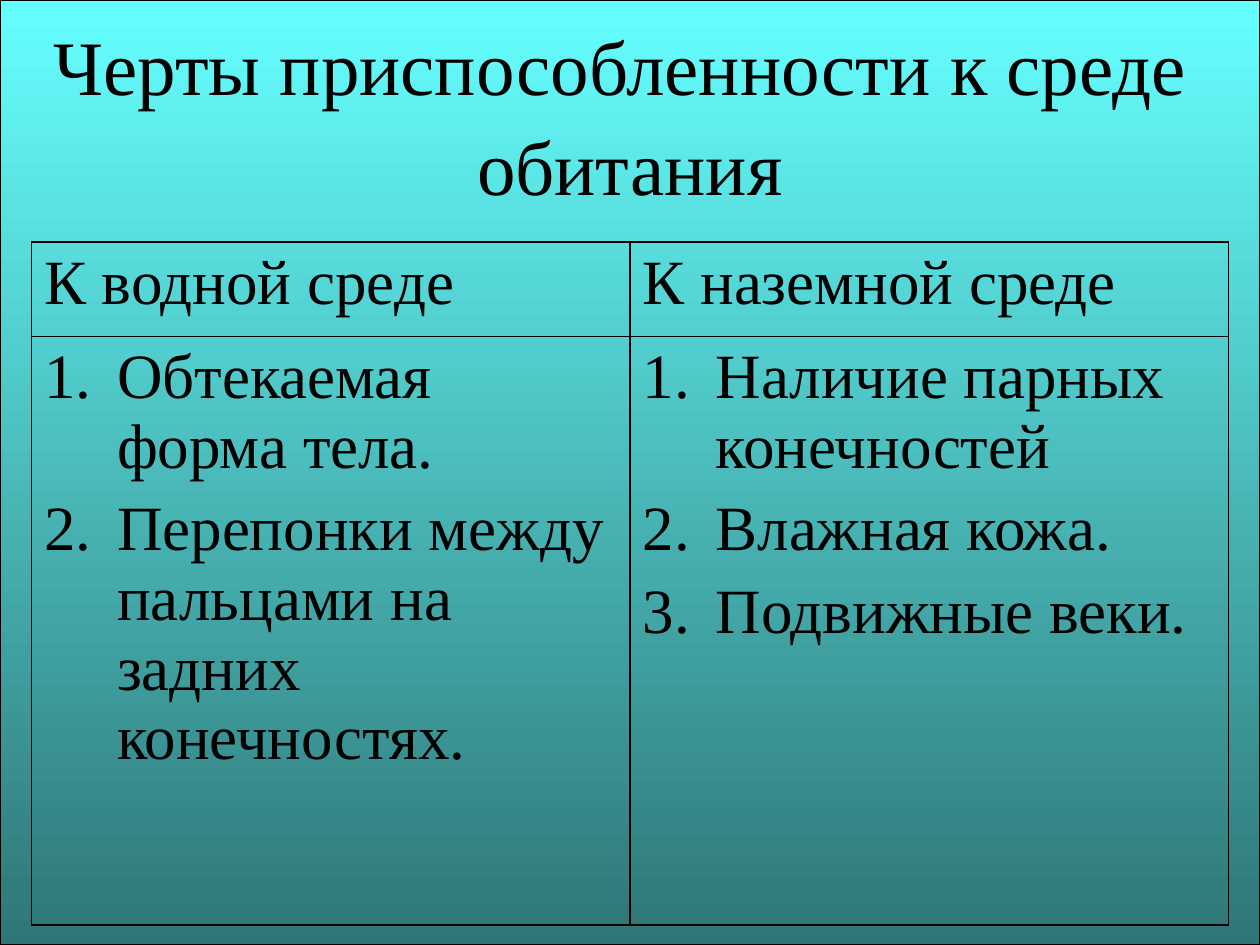
"""Build a slide comparing adaptations to water and to land."""
from dataclasses import dataclass

from lxml.etree import SubElement
from pptx import Presentation
from pptx.dml.color import RGBColor
from pptx.dml.fill import FillFormat
from pptx.enum.text import MSO_ANCHOR, MSO_AUTO_SIZE, PP_ALIGN
from pptx.oxml.ns import qn
from pptx.slide import Slide
from pptx.table import _Cell
from pptx.text.text import _Paragraph
from pptx.util import Inches, Pt

FONT = "Times New Roman"
BLACK = "000000"
GRADIENT = ("66FFFF", "2F7676")
WIDTH, HEIGHT = Inches(10), Inches(7.5)
TABLE_LEFT, TABLE_TOP = Inches(0.25), Inches(1.92)
ROW_HEIGHTS = (Inches(0.75), Inches(4.67))
NUMBER_INDENT = Inches(0.58)
TITLE = ("Черты приспособленности к среде ", "обитания")


@dataclass
class Habitat:
    heading: str
    traits: tuple[str, ...]


HABITATS = (
    Habitat("К водной среде", (
        "Обтекаемая форма тела.",
        "Перепонки между пальцами на задних конечностях.",
    )),
    Habitat("К наземной среде", (
        "Наличие парных конечностей",
        "Влажная кожа.",
        "Подвижные веки.",
    )),
)


def color(value: str) -> RGBColor:
    return RGBColor.from_string(value)


def fill_gradient(fill: FillFormat) -> None:
    fill.gradient()
    fill.gradient_angle = 270
    for stop, shade in zip(fill.gradient_stops, GRADIENT):
        stop.color.rgb = color(shade)


def style(paragraph: _Paragraph, size: int) -> None:
    paragraph.font.name = FONT
    paragraph.font.size = Pt(size)
    paragraph.font.color.rgb = color(BLACK)


def number(paragraph: _Paragraph) -> None:
    properties = paragraph._p.get_or_add_pPr()
    properties.set("marL", str(NUMBER_INDENT))
    properties.set("indent", str(-NUMBER_INDENT))
    bullet = properties.makeelement(qn("a:buAutoNum"), {"type": "arabicPeriod"})
    properties.insert_element_before(bullet, "a:tabLst", "a:defRPr", "a:extLst")


def outline(cell: _Cell) -> None:
    properties = cell._tc.get_or_add_tcPr()
    for position, side in enumerate(("lnL", "lnR", "lnT", "lnB")):
        border = SubElement(properties, qn(f"a:{side}"), w=str(Pt(1)))
        fill = SubElement(border, qn("a:solidFill"))
        SubElement(fill, qn("a:srgbClr"), val=BLACK)
        properties.insert(position, border)


def write_cell(cell: _Cell, lines: tuple[str, ...], numbered: bool) -> None:
    cell.fill.background()
    outline(cell)
    cell.text = "\n".join(lines)
    for paragraph in cell.text_frame.paragraphs:
        paragraph.space_before = Pt(7.2)
        style(paragraph, 36)
        if numbered:
            number(paragraph)


def add_title(slide: Slide) -> None:
    title = slide.shapes.title
    title.left, title.top, title.width, title.height = 0, 0, WIDTH, HEIGHT
    fill_gradient(title.fill)
    title.line.color.rgb = color(BLACK)
    title.line.width = Pt(0.75)
    frame = title.text_frame
    frame.text = "\n".join(TITLE)
    frame.auto_size = MSO_AUTO_SIZE.NONE
    frame.word_wrap = False
    frame.vertical_anchor = MSO_ANCHOR.TOP
    frame.margin_top = Inches(0.15)
    for paragraph in frame.paragraphs:
        paragraph.alignment = PP_ALIGN.CENTER
        style(paragraph, 44)
    frame.paragraphs[-1].space_before = Pt(4)


def add_habitats(slide: Slide) -> None:
    table = slide.shapes.add_table(
        len(ROW_HEIGHTS), len(HABITATS), TABLE_LEFT, TABLE_TOP,
        WIDTH - 2 * TABLE_LEFT, sum(ROW_HEIGHTS),
    ).table
    table.first_row = table.horz_banding = False
    for row, height in zip(table.rows, ROW_HEIGHTS):
        row.height = height
    for column, habitat in enumerate(HABITATS):
        write_cell(table.cell(0, column), (habitat.heading,), False)
        write_cell(table.cell(1, column), habitat.traits, True)


def main() -> None:
    presentation = Presentation()
    presentation.slide_width, presentation.slide_height = WIDTH, HEIGHT
    slide = presentation.slides.add_slide(presentation.slide_layouts[5])
    fill_gradient(slide.background.fill)
    add_title(slide)
    add_habitats(slide)
    presentation.save("out.pptx")


if __name__ == "__main__":
    main()
